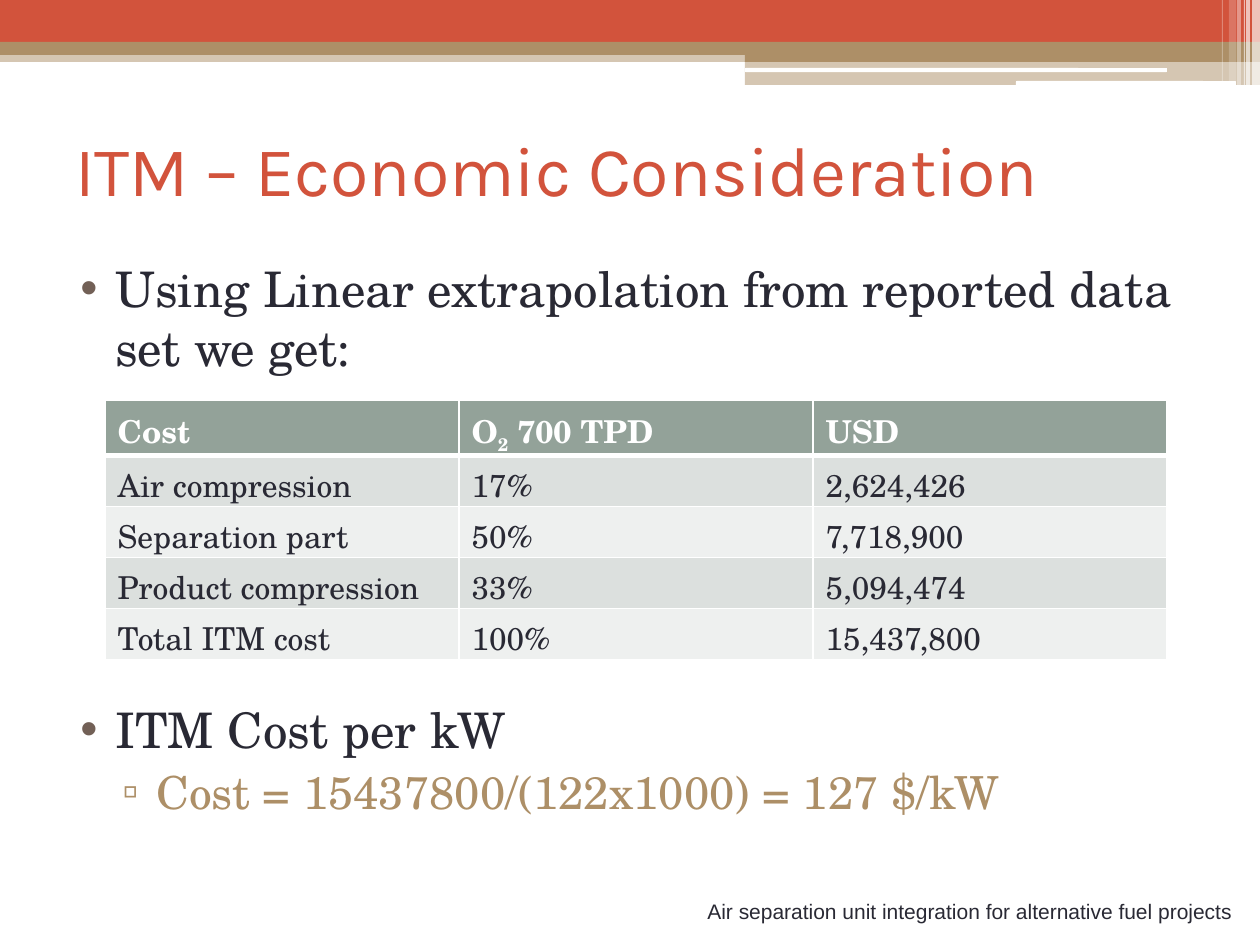
from dataclasses import dataclass

from lxml.etree import SubElement
from pptx import Presentation
from pptx.dml.color import RGBColor
from pptx.enum.shapes import MSO_SHAPE
from pptx.enum.text import MSO_ANCHOR
from pptx.oxml.ns import qn
from pptx.util import Emu, Pt

PX = 914400 / 126


@dataclass(frozen=True)
class Theme:
    red: str = "D2533C"
    tan: str = "AD8F67"
    brown: str = "726056"
    ink: str = "292934"
    white: str = "FFFFFF"
    header: str = "93A299"
    bands: tuple = ("DCE0DE", "EEF0EF")
    heading: str = "Karla"
    serif: str = "TeX Gyre Schola"
    sans: str = "Arial"
    title_pt: int = 40
    body_pt: int = 28
    sub_pt: int = 26
    table_pt: int = 18
    caption_pt: int = 12


T = Theme()


@dataclass(frozen=True)
class Bar:
    x: int
    y: int
    w: int
    h: int
    color: str = T.white
    opacity: int = 100
    kind: MSO_SHAPE = MSO_SHAPE.RECTANGLE


@dataclass(frozen=True)
class Bullet:
    text: str
    size: int
    color: str
    char: str
    char_color: str
    indent: int
    hang: int
    before: int = 3
    level: int = 0


BARS = [
    # Bands across the top
    Bar(0, 50, 1260, 12, T.tan, 50),
    Bar(0, 0, 1260, 43, T.red),
    Bar(0, 42, 1260, 13, T.tan),
    # Step at the right with white slots
    Bar(745, 49, 515, 13, T.tan),
    Bar(745, 61, 515, 24, T.tan, 50),
    Bar(745, 68, 422, 4, kind=MSO_SHAPE.ROUNDED_RECTANGLE),
    Bar(1016, 81, 220, 5, kind=MSO_SHAPE.ROUNDED_RECTANGLE),
    # Translucent upright stripes
    Bar(1252, 0, 8, 86, opacity=65),
    Bar(1246, 0, 4, 86, opacity=65),
    Bar(1244, 0, 1, 86, opacity=60),
    Bar(1237, 0, 4, 86, opacity=40),
    Bar(1229, 0, 7, 81, opacity=20),
    Bar(1222, 0, 1, 81, opacity=30),
]

# The large space before the second bullet leaves room for the table
BULLETS = [
    Bullet("Using Linear extrapolation from reported data set we get:",
           T.body_pt, T.ink, "•", T.brown, 50, 35),
    Bullet("ITM Cost per kW", T.body_pt, T.ink, "•", T.brown, 50, 35, before=185),
    Bullet("Cost = 15437800/(122x1000) = 127 $/kW",
           T.sub_pt, T.tan, "▫", T.tan, 91, 34, level=1),
]

ROWS = [
    ("Cost", ("O", "2", " 700 TPD"), "USD"),
    ("Air compression", "17%", "2,624,426"),
    ("Separation part", "50%", "7,718,900"),
    ("Product compression", "33%", "5,094,474"),
    ("Total ITM cost", "100%", "15,437,800"),
]


def px(n: int) -> Emu:
    return Emu(round(n * PX))


def box(*sides: int) -> list:
    return [px(n) for n in sides]


def add_run(p, text: str, color: str, **fmt):
    r = p.add_run()
    r.text = text
    for name, value in fmt.items():
        setattr(r.font, name, value)
    r.font.color.rgb = RGBColor.from_string(color)
    return r


def add_bar(s, bar: Bar) -> None:
    sp = s.shapes.add_shape(bar.kind, *box(bar.x, bar.y, bar.w, bar.h))
    sp.shadow.inherit = False
    sp.line.fill.background()
    sp.fill.solid()
    sp.fill.fore_color.rgb = RGBColor.from_string(bar.color)
    if bar.opacity < 100:
        color = next(sp.element.spPr.iter(qn("a:srgbClr")))
        SubElement(color, qn("a:alpha"), val=str(bar.opacity * 1000))


def add_text_frame(s, x: int, y: int, w: int, h: int, **fmt):
    tf = s.shapes.add_textbox(*box(x, y, w, h)).text_frame
    for name, value in {"word_wrap": True, **fmt}.items():
        setattr(tf, name, value)
    return tf


def add_bullet(p, b: Bullet) -> None:
    p.level = b.level
    p.space_before = Pt(b.before)
    pPr = p._p.get_or_add_pPr()
    pPr.set("marL", str(px(b.indent)))
    pPr.set("indent", str(-px(b.hang)))
    SubElement(SubElement(pPr, qn("a:buClr")), qn("a:srgbClr"), val=b.char_color)
    SubElement(pPr, qn("a:buFont"), typeface=T.sans)
    SubElement(pPr, qn("a:buChar"), char=b.char)
    add_run(p, b.text, b.color, name=T.serif, size=Pt(b.size))


def add_borders(cell, bottom: int) -> None:
    tcPr = cell._tc.get_or_add_tcPr()
    widths = {"a:lnL": 1, "a:lnR": 1, "a:lnT": 1, "a:lnB": bottom}
    for i, (tag, width) in enumerate(widths.items()):
        ln = SubElement(tcPr, qn(tag), w=str(Pt(width)))
        SubElement(SubElement(ln, qn("a:solidFill")), qn("a:srgbClr"), val=T.white)
        tcPr.insert(i, ln)


def add_cost_table(s, x: int, y: int, col_w: int, row_h: int) -> None:
    n_rows, n_cols = len(ROWS), len(ROWS[0])
    table = s.shapes.add_table(
        n_rows, n_cols, *box(x, y, col_w * n_cols, row_h * n_rows)).table
    for i, row in enumerate(ROWS):
        head = i == 0
        fill = T.header if head else T.bands[(i - 1) % 2]
        for j, value in enumerate(row):
            cell = table.cell(i, j)
            cell.fill.solid()
            cell.fill.fore_color.rgb = RGBColor.from_string(fill)
            add_borders(cell, 3 if head else 1)
            parts = (value,) if isinstance(value, str) else value
            for k, part in enumerate(parts):
                r = add_run(cell.text_frame.paragraphs[0], part,
                            T.white if head else T.ink,
                            name=T.serif, size=Pt(T.table_pt), bold=head)
                if k == 1:  # subscript
                    r.font._element.set("baseline", "-25000")


def main() -> None:
    prs = Presentation()
    prs.slide_width, prs.slide_height = box(1260, 945)
    s = prs.slides.add_slide(prs.slide_layouts[6])

    # Banner
    for bar in BARS:
        add_bar(s, bar)

    # Title
    tf = add_text_frame(s, 63, 95, 1134, 147, vertical_anchor=MSO_ANCHOR.MIDDLE)
    add_run(tf.paragraphs[0], "ITM – Economic Consideration", T.red,
            name=T.heading, size=Pt(T.title_pt))

    # Bullets
    tf = add_text_frame(s, 53, 252, 1134, 596)
    for i, bullet in enumerate(BULLETS):
        add_bullet(tf.add_paragraph() if i else tf.paragraphs[0], bullet)

    # Caption
    tf = add_text_frame(s, 695, 892, 554, 38, word_wrap=False)
    add_run(tf.paragraphs[0],
            "Air separation unit integration for alternative fuel projects",
            T.ink, name=T.sans, size=Pt(T.caption_pt))

    # Cost table
    add_cost_table(s, 105, 400, 354, 51)

    prs.save("out.pptx")


if __name__ == "__main__":
    main()
